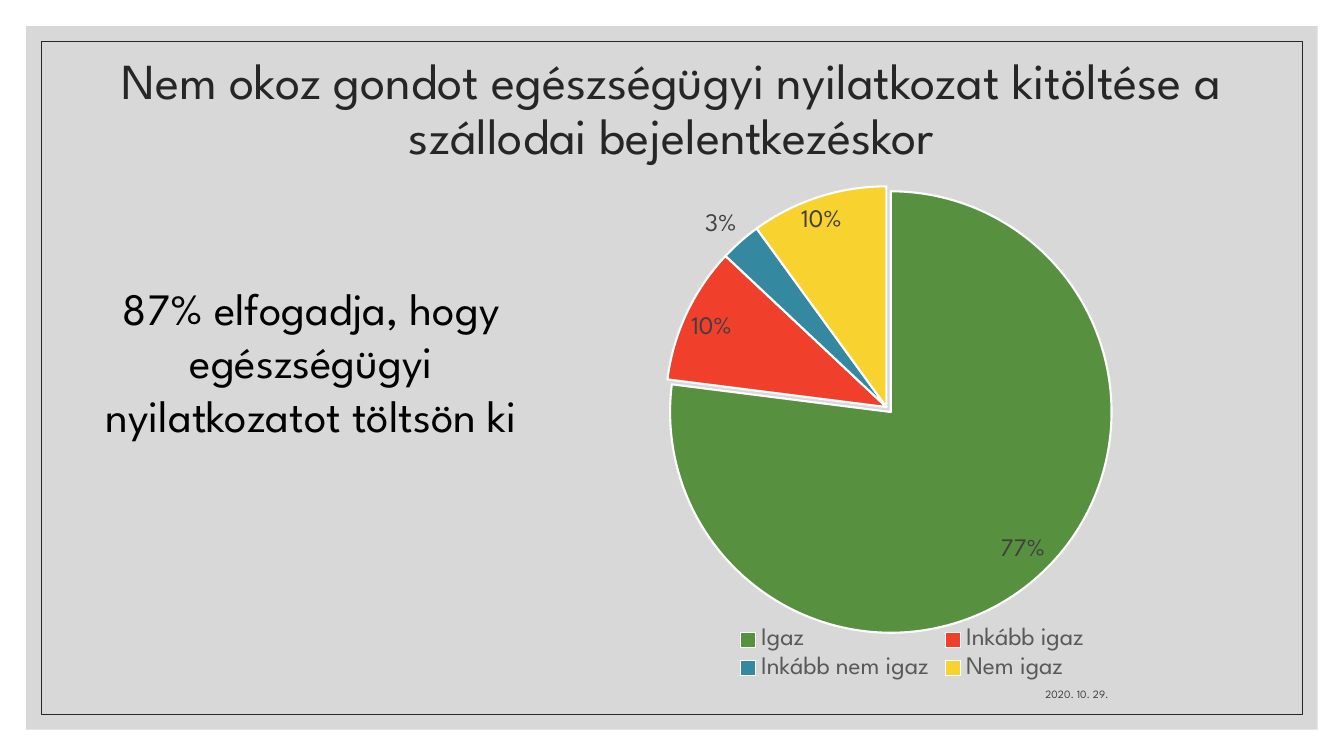
import pptx
import pptx.chart.data
import pptx.dml.color
import pptx.enum.chart
import pptx.enum.shapes
import pptx.enum.text
import pptx.oxml
import pptx.oxml.ns
import pptx.util
from lxml import etree

Pt = pptx.util.Pt
RGBColor = pptx.dml.color.RGBColor
ALIGN = pptx.enum.text.PP_ALIGN
ANCHOR = pptx.enum.text.MSO_ANCHOR

FONT = "League Spartan"
BLACK = RGBColor(0x00, 0x00, 0x00)
WHITE = RGBColor(0xFF, 0xFF, 0xFF)
INK = RGBColor(0x26, 0x26, 0x26)
DARK_GREY = RGBColor(0x40, 0x40, 0x40)
MID_GREY = RGBColor(0x59, 0x59, 0x59)
PANEL_GREY = RGBColor(0xBF, 0xBF, 0xBF)
GREEN = RGBColor(0x57, 0x90, 0x3F)
RED = RGBColor(0xF0, 0x3F, 0x2B)
BLUE = RGBColor(0x34, 0x88, 0xA0)
YELLOW = RGBColor(0xF8, 0xD2, 0x2F)

SLIDE_W, SLIDE_H = 960, 540
ANSWERS = [
    ("Igaz", 0.77, GREEN),
    ("Inkább igaz", 0.1, RED),
    ("Inkább nem igaz", 0.03, BLUE),
    ("Nem igaz", 0.1, YELLOW),
]


def set_all(obj, values):
    for name, value in values.items():
        setattr(obj, name, value)


def style_font(font, size, color):
    set_all(font, {"name": FONT, "size": Pt(size), "bold": False})
    font.color.rgb = color


def write(s, text, size, color, align, anchor, spacing=1.0):
    tf = s.text_frame
    set_all(tf, {"word_wrap": True, "vertical_anchor": anchor,
                 "auto_size": pptx.enum.text.MSO_AUTO_SIZE.NONE})
    p = tf.paragraphs[0]
    set_all(p, {"alignment": align, "line_spacing": spacing})
    r = p.add_run()
    r.text = text
    style_font(r.font, size, color)


def add_frame(slide, margin):
    """Rectangle with the same margin on every side of the slide."""
    sp = slide.shapes.add_shape(
        pptx.enum.shapes.MSO_SHAPE.RECTANGLE, Pt(margin), Pt(margin),
        Pt(SLIDE_W - 2 * margin), Pt(SLIDE_H - 2 * margin))
    sp.shadow.inherit = False
    return sp


def add_background(slide):
    panel = add_frame(slide, 18.72)
    panel.fill.solid()
    panel.fill.fore_color.rgb = PANEL_GREY
    panel.line.fill.background()
    color = panel.fill._xPr.find(".//" + pptx.oxml.ns.qn("a:srgbClr"))
    etree.SubElement(color, pptx.oxml.ns.qn("a:alpha"), val="60000")

    border = add_frame(slide, 29.5)
    border.fill.background()
    border.line.color.rgb = INK
    border.line.width = Pt(0.5)


def add_title(slide, text):
    s = slide.shapes.title
    set_all(s, {"left": Pt(33), "top": Pt(36), "width": Pt(893.5), "height": Pt(86.4)})
    write(s, text, 36, INK, ALIGN.CENTER, ANCHOR.MIDDLE, 0.9)
    # Bring the title in front of the background panel
    slide.shapes._spTree.append(s._element)


def add_text(slide, box, *style):
    write(slide.shapes.add_textbox(*map(Pt, box)), *style)


def set_plot_layout(chart, x, y, w, h):
    ns = pptx.oxml.ns.nsdecls("c")
    sizes = "".join(f'<c:{tag} val="{value}"/>'
                    for tag, value in zip("xywh", (x, y, w, h)))
    layout = pptx.oxml.parse_xml(
        f'<c:layout {ns}><c:manualLayout><c:layoutTarget val="inner"/>'
        f'<c:xMode val="edge"/><c:yMode val="edge"/>{sizes}'
        '</c:manualLayout></c:layout>')
    area = chart._chartSpace.chart.plotArea
    for old in area.findall(pptx.oxml.ns.qn("c:layout")):
        area.remove(old)
    area.insert(0, layout)


def explode(point_xml, percent):
    node = pptx.oxml.parse_xml(
        f'<c:explosion {pptx.oxml.ns.nsdecls("c")} val="{percent}"/>')
    point_xml.find(pptx.oxml.ns.qn("c:spPr")).addprevious(node)


def add_pie(slide):
    data = pptx.chart.data.CategoryChartData(number_format="0%")
    data.categories = [name for name, _, _ in ANSWERS]
    data.add_series("Series 1", [value for _, value, _ in ANSWERS])
    chart = slide.shapes.add_chart(
        pptx.enum.chart.XL_CHART_TYPE.PIE,
        Pt(388.8), Pt(122.4), Pt(525.6), Pt(366.5), data).chart
    set_all(chart, {"has_title": False, "has_legend": True})
    style_font(chart.font, 10, BLACK)
    set_plot_layout(chart, 0.165, 0, 0.6, 0.919)

    # Legend
    set_all(chart.legend, {"include_in_layout": False,
                           "position": pptx.enum.chart.XL_LEGEND_POSITION.BOTTOM})
    style_font(chart.legend.font, 18, MID_GREY)

    # Slices
    plot = chart.plots[0]
    plot.vary_by_categories = True
    series = plot.series[0]
    for i, (_, _, color) in enumerate(ANSWERS):
        fmt = series.points[i].format
        fmt.fill.solid()
        fmt.fill.fore_color.rgb = color
        fmt.line.color.rgb = WHITE
        fmt.line.width = Pt(1.5)
    explode(series._element.find(pptx.oxml.ns.qn("c:dPt")), 3)

    # Labels
    labels = series.data_labels
    set_all(labels, {"show_value": True, "show_percentage": False,
                     "number_format": "0%", "number_format_is_linked": False,
                     "position": pptx.enum.chart.XL_LABEL_POSITION.BEST_FIT})
    style_font(labels.font, 18, DARK_GREY)


def main():
    prs = pptx.Presentation()
    set_all(prs, {"slide_width": Pt(SLIDE_W), "slide_height": Pt(SLIDE_H)})
    slide = prs.slides.add_slide(prs.slide_layouts[5])

    add_background(slide)
    add_title(slide, "Nem okoz gondot egészségügyi nyilatkozat kitöltése a "
                     "szállodai bejelentkezéskor")
    add_text(slide, (571.7, 475.2, 227.5, 28.8), "2020. 10. 29.",
             8, DARK_GREY, ALIGN.RIGHT, ANCHOR.BOTTOM)
    add_pie(slide)
    add_text(slide, (43.9, 196.6, 357.1, 123.8),
             "87% elfogadja, hogy egészségügyi nyilatkozatot töltsön ki",
             32, BLACK, ALIGN.CENTER, ANCHOR.TOP)
    prs.save("out.pptx")


if __name__ == "__main__":
    main()
